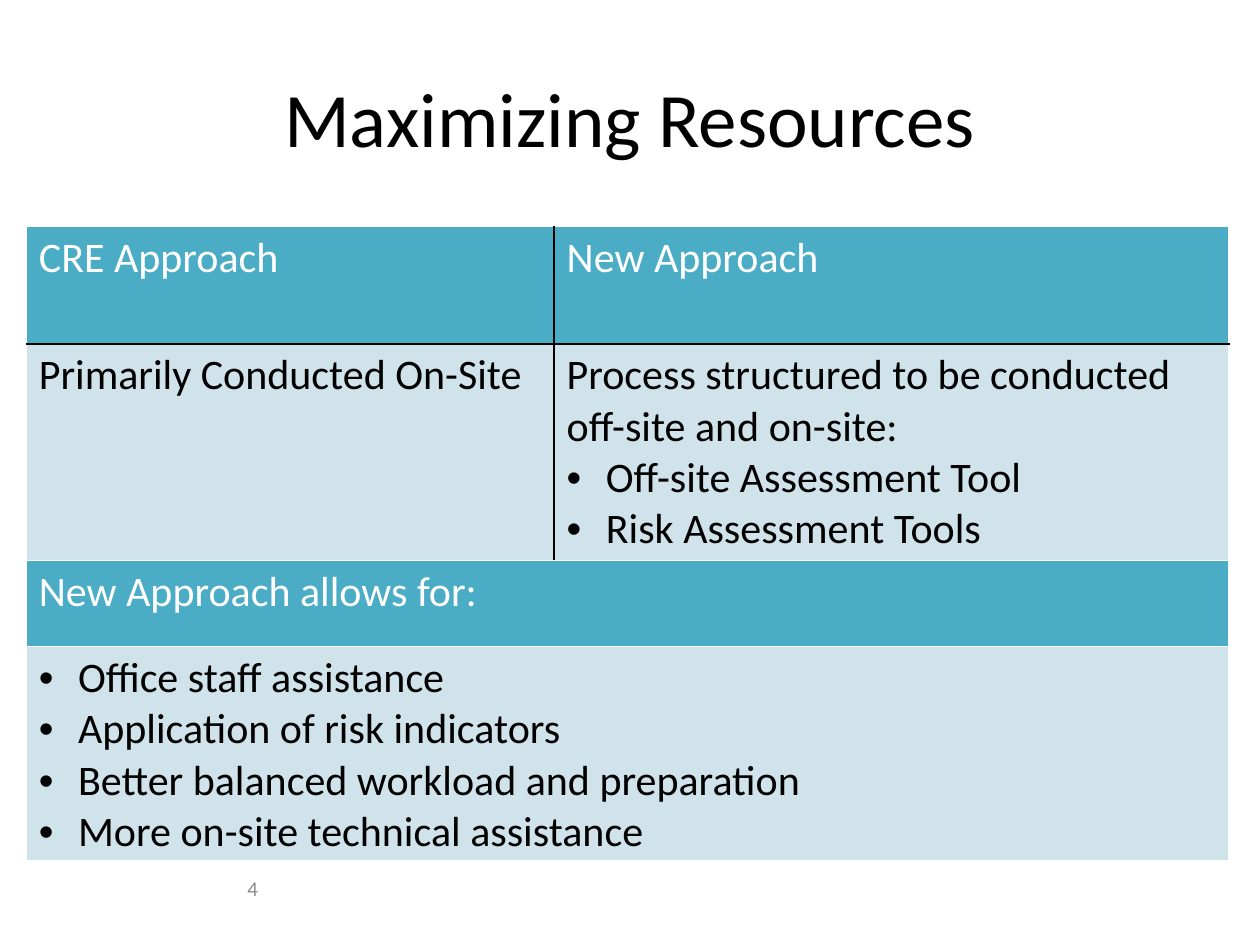
from lxml.etree import SubElement
from pptx import Presentation
from pptx.dml.color import RGBColor
from pptx.enum.text import MSO_ANCHOR, PP_ALIGN
from pptx.oxml.ns import qn
from pptx.util import Cm, Pt

TEAL, PALE, BLACK, WHITE, GREY = "4BACC6", "D0E3EA", "000000", "FFFFFF", "8C8C8C"


def color(value):
    return RGBColor.from_string(value)


def write(para, text, size, ink):
    span = para.add_run()
    span.text = text
    for name, value in {"name": "Calibri", "size": Pt(size), "bold": False}.items():
        setattr(span.font, name, value)
    span.font.color.rgb = color(ink)


deck = Presentation()
deck.slide_width, deck.slide_height = Cm(25.4), Cm(19.05)
page = deck.slides.add_slide(deck.slide_layouts[5])

title = page.shapes.title
number = page.shapes.add_textbox(0, 0, Cm(1), Cm(1))
labels = [
    (title, "Maximizing Resources", 44, BLACK, (1.27, 0.76, 22.86, 3.18)),
    (number, "4", 12, GREY, (1.07, 17.4, 8.05, 1.02)),
]
for box, text, size, ink, place in labels:
    for name, value in zip(("left", "top", "width", "height"), place):
        setattr(box, name, Cm(value))
    box.text_frame.word_wrap = True
    box.text_frame.vertical_anchor = MSO_ANCHOR.MIDDLE
    para = box.text_frame.paragraphs[0]
    para.alignment = PP_ALIGN.CENTER
    write(para, text, size, ink)

approaches = [
    [["CRE Approach"], ["New Approach"]],
    [
        ["Primarily Conducted On-Site"],
        [
            "Process structured to be conducted off-site and on-site:",
            "• Off-site Assessment Tool",
            "• Risk Assessment Tools",
        ],
    ],
]
benefits = [
    [["New Approach allows for:"]],
    [
        [
            "• Office staff assistance",
            "• Application of risk indicators",
            "• Better balanced workload and preparation",
            "• More on-site technical assistance",
        ]
    ],
]
tables = [
    (approaches, 4.57, (10.64, 13.61), (2.36, 4.37), BLACK),
    (benefits, 11.3, (24.25,), (1.73, 4.32), WHITE),
]
for rows, top, widths, heights, line_color in tables:
    frame = page.shapes.add_table(
        len(rows), len(widths), Cm(0.53), Cm(top), Cm(sum(widths)), Cm(sum(heights))
    )
    table = frame.table
    table.first_row = table.horz_banding = False
    for column, width in zip(table.columns, widths):
        column.width = Cm(width)
    for row, height in zip(table.rows, heights):
        row.height = Cm(height)

    for r, row in enumerate(rows):
        for c, lines in enumerate(row):
            cell = table.cell(r, c)
            inner = {
                "a:lnL": c > 0,
                "a:lnR": c < len(widths) - 1,
                "a:lnT": r > 0,
                "a:lnB": r < len(rows) - 1,
            }
            properties = cell._tc.get_or_add_tcPr()
            for tag, shown in inner.items():
                if shown or line_color == WHITE:
                    line = SubElement(properties, qn(tag), w=str(Pt(1)))
                    paint = SubElement(line, qn("a:solidFill"))
                    SubElement(paint, qn("a:srgbClr"), val=line_color)
            cell.fill.solid()
            cell.fill.fore_color.rgb = color(PALE if r else TEAL)

            for i, text in enumerate(lines):
                text_frame = cell.text_frame
                para = text_frame.add_paragraph() if i else text_frame.paragraphs[0]
                if text.startswith("•"):
                    layout = para._p.get_or_add_pPr()
                    layout.set("marL", str(Cm(0.79)))
                    layout.set("indent", str(-Cm(0.79)))
                    SubElement(layout, qn("a:buFont"), typeface="Arial")
                    SubElement(layout, qn("a:buChar"), char="•")
                write(para, text.removeprefix("• "), 24, BLACK if r else WHITE)

deck.save("out.pptx")
